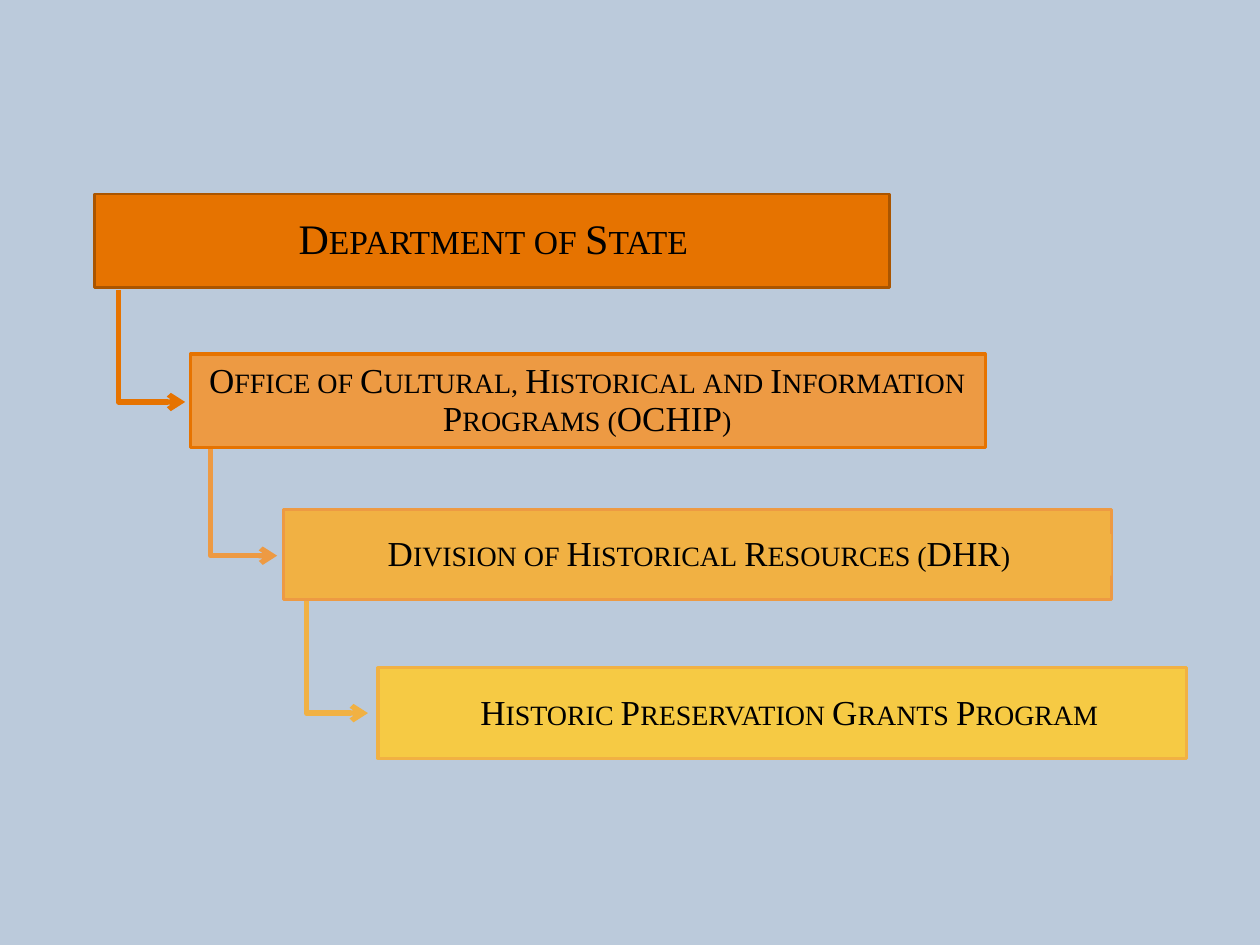
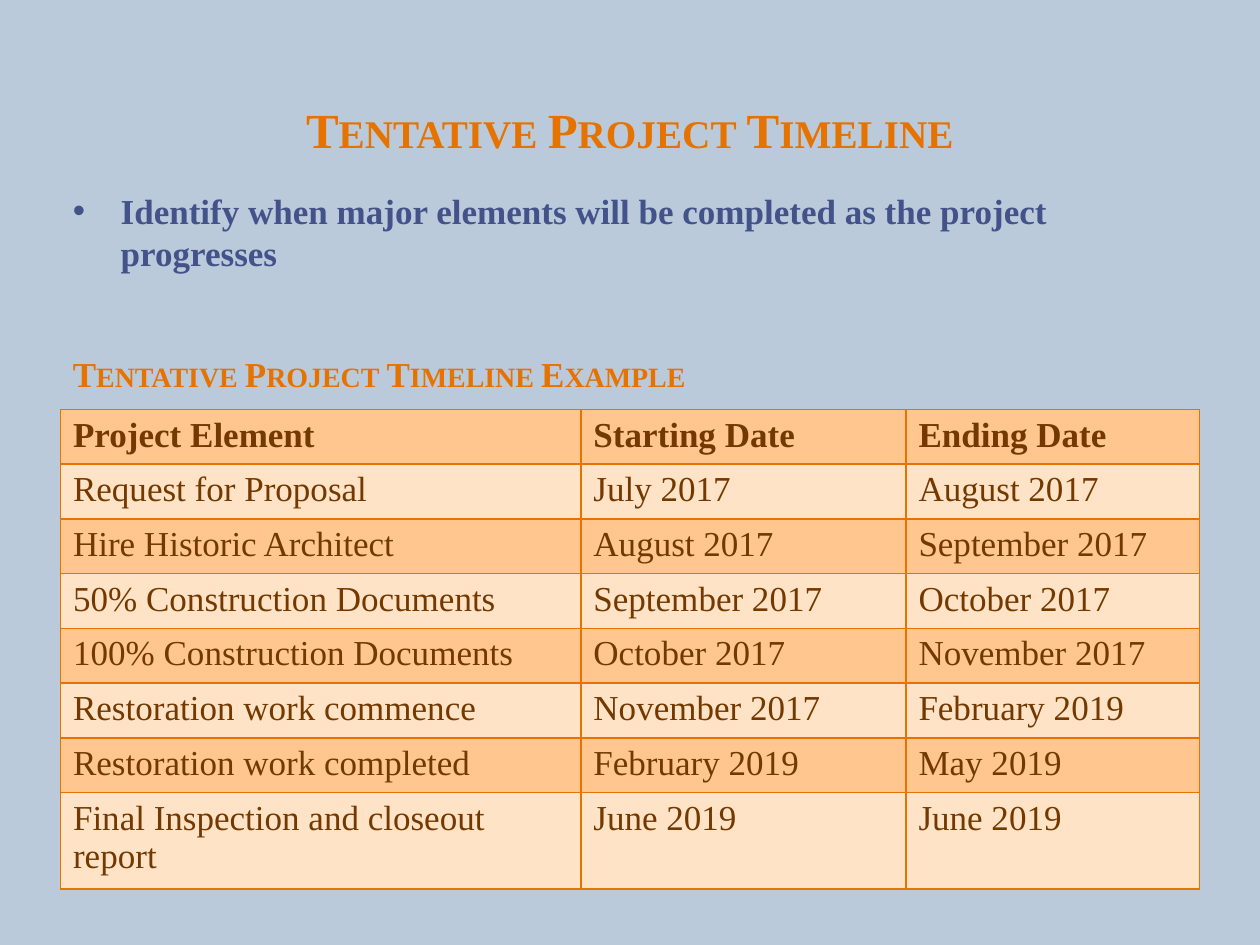
import lxml.etree
import pptx
import pptx.dml.color
import pptx.enum.shapes
import pptx.enum.text
import pptx.oxml
import pptx.oxml.ns
import pptx.util

Inches = pptx.util.Inches
Pt = pptx.util.Pt
ALIGN = pptx.enum.text.PP_ALIGN
ANCHOR = pptx.enum.text.MSO_ANCHOR
qn = pptx.oxml.ns.qn

# Shared style
FONT = "Times New Roman"
BACKGROUND = "BBCADB"
ORANGE = "E67300"
BLUE = "435289"
BROWN = "733900"
BLACK = "000000"
BAND_FILLS = ["FFC78F", "FFE3C7"]

# Organization levels: bar box, fill, border, border width; label box, text, size, inset, filled
LEVELS = [
    {"bar": (0.75, 1.54, 6.31, 0.74), "fill": ORANGE, "border": "AA5500", "width": 1.5,
     "label": (0.81, 1.71, 6.21, 0.4), "text": "Department of State",
     "size": 24, "inset": 0.02, "label_filled": True},
    {"bar": (1.51, 2.81, 6.31, 0.74), "fill": "ED9A43", "border": ORANGE, "width": 1.75,
     "label": (1.5, 2.87, 6.32, 0.63),
     "text": "Office of Cultural, Historical and Information Programs (OCHIP)",
     "size": 20, "inset": 0.01, "label_filled": False},
    {"bar": (2.25, 4.04, 6.57, 0.72), "fill": "F1B143", "border": "ED9A43", "width": 1.75,
     "label": (2.33, 4.24, 6.49, 0.33), "text": "Division of Historical Resources (DHR) ",
     "size": 20, "inset": 0.01, "label_filled": True},
    {"bar": (3, 5.3, 6.42, 0.72), "fill": "F6CA44", "border": "F1B143", "width": 1.75,
     "label": (3, 5.5, 6.53, 0.33), "text": "Historic Preservation Grants Program",
     "size": 20, "inset": 0.01, "label_filled": False},
]
# Start and end of the arrow leaving each level but the last
ARROWS = [
    ((0.94, 2.3), (1.47, 3.19)),
    ((1.67, 3.52), (2.2, 4.41)),
    ((2.43, 4.73), (2.92, 5.66)),
]

TITLE = "Tentative Project Timeline"
BULLET = "Identify when major elements will be completed as the project progresses"
TABLE_HEADING = "Tentative Project Timeline Example"
TIMELINE = [
    ("Project Element", "Starting Date", "Ending Date"),
    ("Request for Proposal", "July 2017", "August 2017"),
    ("Hire Historic Architect", "August 2017", "September 2017"),
    ("50% Construction Documents", "September 2017", "October 2017"),
    ("100% Construction Documents", "October 2017", "November 2017"),
    ("Restoration work commence", "November 2017", "February 2019"),
    ("Restoration work completed", "February 2019", "May 2019"),
    ("Final Inspection and closeout report", "June 2019", "June 2019"),
]
TABLE_BOX = (0.48, 3.25, 9.04, 3.8)
COLUMN_WIDTHS = [4.13, 2.58, 2.33]
LAST_ROW_HEIGHT = 0.76


def color(value):
    return pptx.dml.color.RGBColor.from_string(value)


def set_fill(target, value):
    target.fill.solid()
    target.fill.fore_color.rgb = color(value)


def write(frame, text, size=20, ink=BLACK, bold=False, small_caps=False,
          align=ALIGN.LEFT, line_spacing=None):
    paragraph = frame.paragraphs[0]
    paragraph.alignment = align
    if line_spacing:
        paragraph.line_spacing = line_spacing
    run = paragraph.add_run()
    run.text = text
    run.font.name = FONT
    run.font.size = Pt(size)
    run.font.bold = bold
    run.font.color.rgb = color(ink)
    if small_caps:
        run.font._element.set("cap", "small")
    return paragraph


def add_text(slide, box, text, anchor=ANCHOR.TOP, inset=None, fill=None, **text_format):
    shape = slide.shapes.add_textbox(*map(Inches, box))
    frame = shape.text_frame
    frame.word_wrap = True
    frame.vertical_anchor = anchor
    if inset is not None:
        frame.margin_left = frame.margin_right = Inches(inset)
        frame.margin_top = frame.margin_bottom = Inches(inset)
    if fill:
        set_fill(shape, fill)
    write(frame, text, **text_format)
    return shape


def add_bar(slide, level):
    shape = slide.shapes.add_shape(pptx.enum.shapes.MSO_SHAPE.RECTANGLE, *map(Inches, level["bar"]))
    shape.shadow.inherit = False
    set_fill(shape, level["fill"])
    shape.line.color.rgb = color(level["border"])
    shape.line.width = Pt(level["width"])


def add_elbow_arrow(slide, start, end, ink):
    """Draw an arrow that goes down, then right: a one-bend elbow turned by 270 degrees."""
    center_x, center_y = (start[0] + end[0]) / 2, (start[1] + end[1]) / 2
    half_run, half_drop = (end[0] - start[0]) / 2, (end[1] - start[1]) / 2
    connector = slide.shapes.add_connector(
        pptx.enum.shapes.MSO_CONNECTOR.ELBOW,
        Inches(center_x + half_drop), Inches(center_y - half_run),
        Inches(center_x - half_drop), Inches(center_y + half_run))
    connector.line.color.rgb = color(ink)
    connector.line.width = Pt(3)
    properties = connector._element.spPr
    properties.find(qn("a:xfrm")).set("rot", str(270 * 60000))
    properties.find(qn("a:prstGeom")).set("prst", "bentConnector2")
    lxml.etree.SubElement(properties.find(qn("a:ln")), qn("a:tailEnd"), type="arrow")
    lxml.etree.SubElement(properties, qn("a:effectLst"))


def add_bullet(paragraph, indent):
    properties = paragraph._p.get_or_add_pPr()
    properties.set("marL", str(Inches(indent)))
    properties.set("indent", str(-Inches(indent)))
    lxml.etree.SubElement(properties, qn("a:buFont"), typeface="Arial")
    lxml.etree.SubElement(properties, qn("a:buChar"), char="•")


def set_borders(cell, ink, width):
    properties = cell._tc.get_or_add_tcPr()
    for position, side in enumerate(("a:lnL", "a:lnR", "a:lnT", "a:lnB")):
        line = lxml.etree.Element(qn(side), w=str(Pt(width)))
        line_fill = lxml.etree.SubElement(line, qn("a:solidFill"))
        lxml.etree.SubElement(line_fill, qn("a:srgbClr"), val=ink)
        properties.insert(position, line)


def add_slide(presentation):
    slide = presentation.slides.add_slide(presentation.slide_layouts[6])
    set_fill(slide.background, BACKGROUND)
    return slide


def build_organization(presentation):
    slide = add_slide(presentation)
    # Arrows lie behind the bars
    for level, (start, end) in zip(LEVELS, ARROWS):
        add_elbow_arrow(slide, start, end, level["fill"])
    # Bars and their labels
    for level in LEVELS:
        add_bar(slide, level)
        add_text(slide, level["label"], level["text"], anchor=ANCHOR.MIDDLE,
                 inset=level["inset"], fill=level["fill"] if level["label_filled"] else None,
                 size=level["size"], small_caps=True, align=ALIGN.CENTER, line_spacing=0.9)


def add_timeline_table(slide):
    table = slide.shapes.add_table(len(TIMELINE), len(COLUMN_WIDTHS), *map(Inches, TABLE_BOX)).table
    for column, width in zip(table.columns, COLUMN_WIDTHS):
        column.width = Inches(width)
    row_height = (TABLE_BOX[3] - LAST_ROW_HEIGHT) / (len(TIMELINE) - 1)
    for row_index, entries in enumerate(TIMELINE):
        is_last = row_index == len(TIMELINE) - 1
        table.rows[row_index].height = Inches(LAST_ROW_HEIGHT if is_last else row_height)
        for column_index, entry in enumerate(entries):
            cell = table.cell(row_index, column_index)
            set_fill(cell, BAND_FILLS[row_index % 2])
            set_borders(cell, ORANGE, 1)
            write(cell.text_frame, entry, ink=BROWN, bold=row_index == 0)


def build_timeline(presentation):
    slide = add_slide(presentation)
    # Title
    add_text(slide, (-0.21, 0.74, 10.42, 0.57), TITLE, anchor=ANCHOR.MIDDLE, size=28,
             ink=ORANGE, bold=True, small_caps=True, align=ALIGN.CENTER)
    # Table and its heading
    add_timeline_table(slide)
    add_text(slide, (0.48, 2.75, 8.57, 0.44), TABLE_HEADING,
             ink=ORANGE, bold=True, small_caps=True)
    # Bullet, raised by a deep bottom margin
    note = add_text(slide, (0.48, 1.44, 8, 1.31), BULLET, anchor=ANCHOR.MIDDLE,
                    ink=BLUE, bold=True)
    note.text_frame.margin_bottom = Inches(0.56)
    add_bullet(note.text_frame.paragraphs[0], 0.38)


def main():
    presentation = pptx.Presentation()
    presentation.slide_width = Inches(10)
    presentation.slide_height = Inches(7.5)
    build_organization(presentation)
    build_timeline(presentation)
    presentation.save("out.pptx")


if __name__ == "__main__":
    main()
